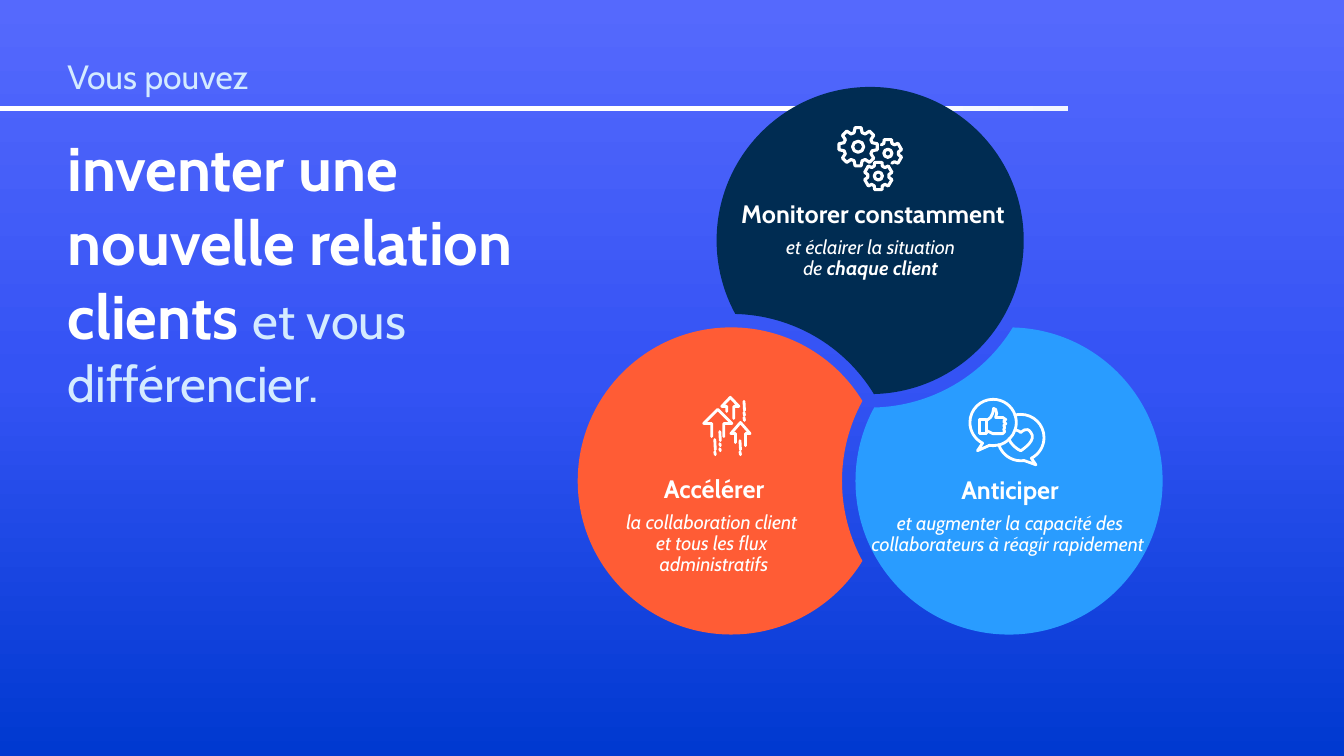
from copy import deepcopy
from math import acos, atan2, ceil, cos, degrees, dist, floor, radians, sin, tan

from lxml.etree import SubElement
from pptx import Presentation
from pptx.dml.color import RGBColor
from pptx.enum.shapes import MSO_SHAPE
from pptx.enum.text import MSO_ANCHOR, PP_ALIGN
from pptx.oxml.ns import qn
from pptx.util import Cm, Pt

COLORS = {
    "white": "FFFFFF", "mist": "F2F6FF", "pale": "D4EBFF",
    "navy": "002C52", "sky": "299CFF", "orange": "FF5C35",
    "top": "5569FD", "middle": "3453F4", "bottom": "0039D0",
}
UNIT = 2.54 / 100
RADIUS, CUT_RADIUS = 3.87, 4.21


def polar(center, radius, angle):
    turn = radians(angle)
    return center[0] + radius * cos(turn), center[1] + radius * sin(turn)


def lines(*points):
    return [(q,) for q in points]


def arc(center, radius, start, end):
    low, high = sorted((start, end))
    quarters = range(90 * (floor(low / 90) + 1), 90 * ceil(high / 90), 90)
    stops = sorted([low, *quarters, high], reverse=start > end)
    path = lines(polar(center, radius, start))
    for a, b in zip(stops, stops[1:]):
        reach = 4 / 3 * tan(radians(b - a) / 4) * radius
        p, q = polar(center, radius, a), polar(center, radius, b)
        path.append((polar(p, reach, a + 90), polar(q, -reach, b + 90), q))
    return path


def bitten_disc(center, neighbour):
    gap = dist(center, neighbour)
    axis = degrees(atan2(neighbour[1] - center[1], neighbour[0] - center[0]))
    a = degrees(acos((gap ** 2 + RADIUS ** 2 - CUT_RADIUS ** 2) / (2 * gap * RADIUS)))
    b = degrees(acos((gap ** 2 + CUT_RADIUS ** 2 - RADIUS ** 2) / (2 * gap * CUT_RADIUS)))
    return (arc(center, RADIUS, axis + a, axis + 360 - a)
            + arc(neighbour, CUT_RADIUS, axis + 180 + b, axis + 180 - b)[1:])


def gear(center, teeth, first, tip, root, tip_half, root_half):
    offsets = (root, -root_half), (tip, -tip_half), (tip, tip_half), (root, root_half)
    return lines(*(polar(center, radius, first + 360 / teeth * k + offset)
                   for k in range(teeth) for radius, offset in offsets))


def arrow(x, y, head, wing, stem, right, left):
    return lines((x + stem, right), (x + stem, head), (x + wing, head), (x, y),
                 (x - wing, head), (x - stem, head), (x - stem, left))


class SlideBuilder:
    font = "Cabin"

    def __init__(self, prs):
        self.s = prs.slides.add_slide(prs.slide_layouts[6])

    def color(self, name):
        return RGBColor.from_string(COLORS[name])

    def gradient(self, fill, element, angle, stops):
        fill.gradient()
        fill.gradient_angle = angle
        gs_list = element.find(".//" + qn("a:gsLst"))
        gs_list.append(deepcopy(gs_list[0]))
        for stop, (position, name) in zip(fill.gradient_stops, stops):
            stop.position = position
            stop.color.rgb = self.color(name)

    def background(self, stops):
        self.gradient(self.s.background.fill, self.s._element, 270, stops)

    def bar(self, x, y, w, h, stops):
        sp = self.s.shapes.add_shape(MSO_SHAPE.RECTANGLE, Cm(x), Cm(y), Cm(w), Cm(h))
        sp.shadow.inherit = False
        sp.line.fill.background()
        self.gradient(sp.fill, sp._element.spPr, 180, stops)

    def outline(self, shapes, path, closed):
        emu = [(Cm(x), Cm(y)) for segment in path for x, y in segment]
        builder = shapes.build_freeform(*emu[0], scale=1.0)
        builder.add_line_segments(emu[1:], close=closed)
        sp = builder.convert_to_shape()
        sp.shadow.inherit = False
        steps = iter(sp._element.findall(".//" + qn("a:lnTo")))
        for segment in path[1:]:
            step, *rest = [next(steps) for _ in segment]
            if rest:
                step.tag = qn("a:cubicBezTo")
            for extra in rest:
                step.append(extra[0])
                extra.getparent().remove(extra)
        return sp

    def disc(self, center, neighbour, name):
        sp = self.outline(self.s.shapes, bitten_disc(center, neighbour), True)
        sp.fill.solid()
        sp.fill.fore_color.rgb = self.color(name)
        sp.line.fill.background()

    def start_icon(self, x, y, width):
        self.icon = self.s.shapes.add_group_shape().shapes
        self.origin, self.stroke_width = (x, y), width

    def icon_path(self, path, closed=False):
        placed = [[tuple(o + v * UNIT for o, v in zip(self.origin, q)) for q in segment]
                  for segment in path]
        sp = self.outline(self.icon, placed, closed)
        sp.fill.background()
        sp.line.color.rgb = self.color("white")
        sp.line.width = Pt(self.stroke_width)
        ln = sp.line._get_or_add_ln()
        ln.set("cap", "rnd")
        SubElement(ln, qn("a:round"))

    def text(self, x, y, w, h, paragraphs, align=PP_ALIGN.LEFT, spacing=1.0,
             insets=(0.25, 0.13), gaps=(6, 0)):
        tf = self.s.shapes.add_textbox(Cm(x), Cm(y), Cm(w), Cm(h)).text_frame
        tf.word_wrap = True
        tf.vertical_anchor = MSO_ANCHOR.TOP
        tf.margin_left = tf.margin_right = Cm(insets[0])
        tf.margin_top = tf.margin_bottom = Cm(insets[1])
        for i, parts in enumerate(paragraphs):
            p = tf.add_paragraph() if i else tf.paragraphs[0]
            p.alignment = align
            p.line_spacing = spacing
            p.space_before = Pt(gaps[0] if i else 0)
            p.space_after = Pt(0 if i else gaps[1])
            for k, (words, size, name, bold, italic) in enumerate(parts):
                done = len(p.runs)
                if k:
                    p.add_run().text = words
                else:
                    p.text = words
                for r in p.runs[done:]:
                    r.font.name = self.font
                    r.font.size = Pt(size)
                    r.font.bold, r.font.italic = bold, italic
                    r.font.color.rgb = self.color(name)
            for br in p._p.findall(qn("a:br")):
                SubElement(br, qn("a:rPr")).set("sz", str(parts[0][1] * 100))

    def card(self, x, y, w, h, title, body, strong=None):
        parts = [(body, 14, "white", False, True)]
        if strong:
            parts.append((strong, 14, "white", True, True))
        self.text(x, y, w, h, [[(title, 18, "white", True, False)], parts],
                  PP_ALIGN.CENTER, 0.9)


def main():
    prs = Presentation()
    prs.slide_width, prs.slide_height = Cm(33.87), Cm(19.05)
    b = SlideBuilder(prs)
    b.background([(0, "top"), (0.5, "middle"), (1, "bottom")])
    b.bar(0, 2.67, 26.92, 0.13, [(0, "mist"), (0.23, "white"), (0.99, "white")])
    b.text(1.6, 1.42, 12.6, 9.07, [
        [("Vous pouvez", 24, "pale", False, False)],
        [("inventer une nouvelle relation clients ", 44, "white", True, False),
         ("et vous différencier.", 36, "pale", False, False)],
    ], insets=(0.1, 0), gaps=(12, 12))

    monitor, anticipate, accelerate = (21.93, 6.06), (25.43, 12.12), (18.43, 12.12)
    b.disc(monitor, accelerate, "navy")
    b.card(18.14, 4.95, 7.72, 2.24, "Monitorer constamment",
           "et éclairer la situation \vde ", "chaque client ")
    b.disc(anticipate, monitor, "sky")
    b.card(21.62, 11.91, 7.67, 2.77, "Anticiper",
           "et augmenter la capacité des collaborateurs à réagir rapidement ")

    b.start_icon(24.38, 9.91, 2)
    left, right = (25.5, 29), (53, 44)
    cuts = -18, 18, 46, 76, 99
    for start, end in zip(cuts, cuts[1:]):
        b.icon_path(arc(left, 23, start, end))
    b.icon_path(arc(left, 23, -18, -243) + lines((10, 57), polar(left, 23, 99)))
    b.icon_path(arc(right, 23, -105, 63) + lines((68, 71), polar(right, 23, 82)))
    b.icon_path(arc(right, 23, 82, 162))
    for bubble, angle in ((left, 99), (right, 82)):
        b.icon_path(arc(bubble, 23, angle, angle + 1))
    b.icon_path([((47, 36),), ((50, 36), (53, 39), (53, 39)), ((53, 39), (59, 32), (63, 39)),
                 ((69, 46), (56, 55), (53, 57)), ((50, 56), (43, 51), (41, 45))])
    b.icon_path(lines((19, 27), (23, 24), (25, 20), (26, 15), (28, 16), (29, 20), (28, 24),
                      (35, 24), (38, 26), (36, 28), (38, 30), (36, 32), (37, 34), (36, 36),
                      (37, 38), (35, 40), (25, 40), (19, 37)))
    b.icon_path(lines((12, 26), (19, 26), (19, 40), (12, 40)), True)

    b.disc(accelerate, anticipate, "orange")
    b.card(14.58, 11.89, 6.83, 2.77, "Accélérer",
           "la collaboration client \vet tous les flux \vadministratifs")

    b.start_icon(17.53, 9.91, 2)
    for shape in ((44.5, 29, 40, 9.5, 5, 52, 49), (34.5, 4, 13, 8.5, 3.5, 25, 18),
                  (22, 16, 30, 14, 6, 43, 43)):
        b.icon_path(arrow(*shape))
    dashes = {44: [(47, 56), (58, 61)], 24: [(38, 47), (50, 52), (55, 57)],
              48: [(8, 17), (19, 22), (24, 27)], 19: [(46, 56), (58, 61)]}
    for x, spans in dashes.items():
        for top, bottom in spans:
            b.icon_path(lines((x, top), (x + 0.5, bottom)))

    b.start_icon(21.08, 3.05, 2.25)
    large, low, side = (21.5, 25.5), (41.5, 54.5), (51, 32)
    small_teeth = 6, -150, 14, 10.6, 15, 22
    b.icon_path(gear(large, 8, 0, 19.2, 14.5, 9, 16), True)
    b.icon_path(gear(low, *small_teeth), True)
    b.icon_path(gear(side, *small_teeth)[3:17])
    for center, radius in ((large, 5.5), (low, 4), (side, 4)):
        b.icon_path(arc(center, radius, 0, 360), True)
    prs.save("out.pptx")


if __name__ == "__main__":
    main()
